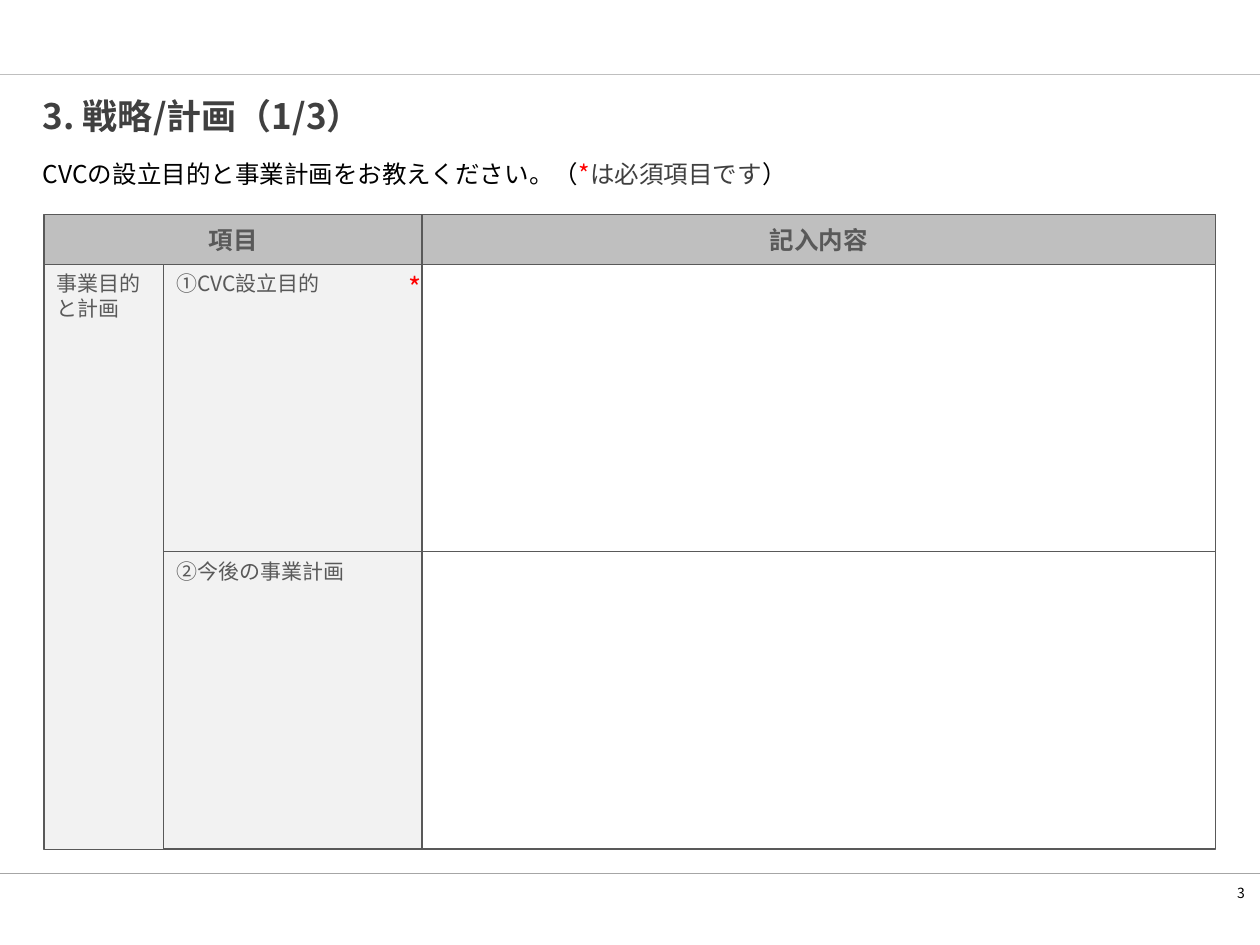
from lxml import etree
from pptx import Presentation, util as u
from pptx.dml.color import RGBColor
from pptx.enum import shapes, text
from pptx.oxml.ns import qn

THEME = {
    "font": "Noto Sans CJK JP",
    "ink": "000000", "title": "404040", "label": "595959", "required": "FF0000",
    "header": "BFBFBF", "item": "F2F2F2", "entry": "FFFFFF",
    "top_rule": "BFBFBF", "bottom_rule": "A6A6A6",
    "title_size": 20, "lead_size": 14, "item_size": 12, "mark_size": 16, "page_size": 8,
    "rule_width": 0.75,
}
WIDTH, HEIGHT = 10, 7.5

TITLE = "3. 戦略/計画（1/3）"
LEAD = [("CVCの設立目的と事業計画をお教えください。（", "ink"), ("*", "required"),
        ("は必須項目です", "title"), ("）", "ink")]
PAGE = "3"
RULES = [(0.59, "top_rule"), (6.93, "bottom_rule")]

# Grid edges of the form: group | item | entry, and header | purpose | plan
COLUMNS = [0.35, 1.3, 3.35, 9.65]
ROWS = [1.7, 2.1, 4.38, 6.74]
# (text, first column, column span, first row, row span, fill)
CELLS = [
    ("項目", 0, 2, 0, 1, "header"),
    ("記入内容", 2, 1, 0, 1, "header"),
    ("①CVC設立目的", 1, 1, 1, 1, "item"),
    ("", 2, 1, 1, 1, "entry"),
    ("②今後の事業計画", 1, 1, 2, 1, "item"),
    ("", 2, 1, 2, 1, "entry"),
    ("事業目的と計画", 0, 1, 1, 2, "item"),
]
MARK_WIDTH = 0.16


def color(name):
    return RGBColor.from_string(THEME[name])


def write(frame, parts, size, bold=False, align=text.PP_ALIGN.LEFT,
          anchor=text.MSO_ANCHOR.TOP, insets=(0, 0, 0, 0)):
    """Fill a text frame with one paragraph of (text, colour name) parts."""
    frame.word_wrap = True
    frame.vertical_anchor = anchor
    (frame.margin_left, frame.margin_top,
     frame.margin_right, frame.margin_bottom) = map(u.Inches, insets)
    paragraph = frame.paragraphs[0]
    paragraph.alignment = align
    font = paragraph.font
    font.size, font.bold, font.name = u.Pt(THEME[size]), bold, THEME["font"]
    defaults = paragraph._p.pPr.find(qn("a:defRPr"))
    etree.SubElement(defaults, qn("a:ea")).set("typeface", THEME["font"])
    for words, tint in parts:
        run = paragraph.add_run()
        run.text = words
        run.font.color.rgb = color(tint)
    return paragraph


def add_text(slide, place, parts, size, **style):
    box = slide.shapes.add_textbox(*map(u.Inches, place))
    return write(box.text_frame, parts, size, **style)


def add_rule(slide, y, tint):
    rule = slide.shapes.add_connector(shapes.MSO_CONNECTOR.STRAIGHT, 0, u.Inches(y),
                                      u.Inches(WIDTH), u.Inches(y))
    rule.line.color.rgb = color(tint)
    rule.line.width = u.Pt(THEME["rule_width"])
    etree.SubElement(rule._element.spPr, qn("a:effectLst"))


def add_cell(slide, words, column, across, row, down, fill):
    left, top = COLUMNS[column], ROWS[row]
    place = (left, top, COLUMNS[column + across] - left, ROWS[row + down] - top)
    cell = slide.shapes.add_shape(shapes.MSO_SHAPE.RECTANGLE, *map(u.Inches, place))
    cell.shadow.inherit = False
    cell.fill.solid()
    cell.fill.fore_color.rgb = color(fill)
    cell.line.color.rgb = color("label")
    cell.line.width = u.Pt(THEME["rule_width"])
    if words:
        heading = fill == "header"
        write(cell.text_frame, [(words, "label")],
              "lead_size" if heading else "item_size", bold=heading,
              align=text.PP_ALIGN.CENTER if heading else text.PP_ALIGN.LEFT,
              anchor=text.MSO_ANCHOR.MIDDLE if heading else text.MSO_ANCHOR.TOP,
              insets=(0.1, 0.05, 0.1, 0.05))


def main():
    deck = Presentation()
    deck.slide_width, deck.slide_height = u.Inches(WIDTH), u.Inches(HEIGHT)
    slide = deck.slides.add_slide(deck.slide_layouts[6])

    for y, tint in RULES:
        add_rule(slide, y, tint)
    add_text(slide, (9.63, 7.02, 0.25, 0.12), [(PAGE, "ink")], "page_size",
             align=text.PP_ALIGN.RIGHT)
    title = add_text(slide, (0.34, 0.62, 9.39, 0.63), [(TITLE, "title")], "title_size",
                     bold=True, anchor=text.MSO_ANCHOR.MIDDLE)
    title.line_spacing = 0.9
    add_text(slide, (0.34, 1.26, 9.39, 0.39), LEAD, "lead_size")

    for cell in CELLS:
        add_cell(slide, *cell)
    add_text(slide, (COLUMNS[2] - MARK_WIDTH, ROWS[1], MARK_WIDTH, ROWS[2] - ROWS[1]),
             [("*", "required")], "mark_size", align=text.PP_ALIGN.CENTER,
             insets=(0.05, 0.05, 0, 0.05))

    deck.save("out.pptx")


if __name__ == "__main__":
    main()
